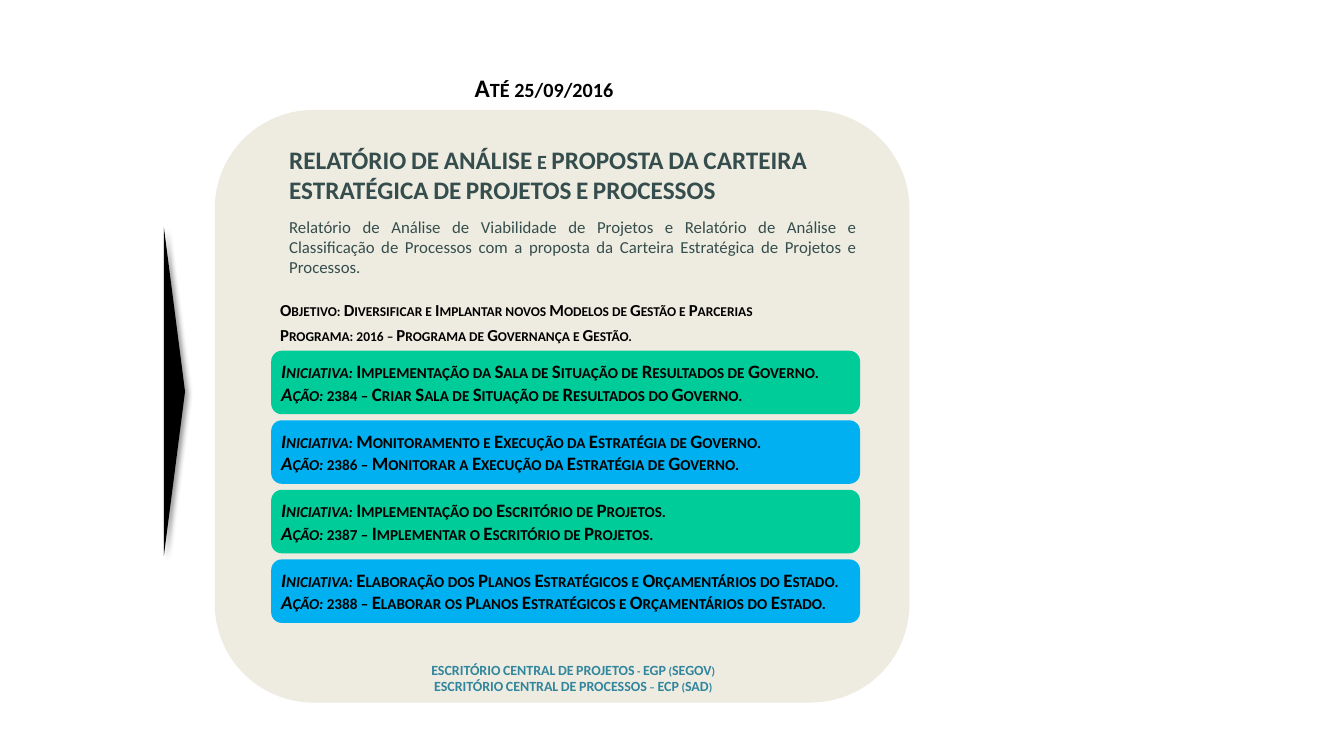
"""Build the slide on the strategic portfolio of projects and processes."""
from dataclasses import dataclass

from lxml.etree import SubElement
from pptx import Presentation
from pptx.dml.color import RGBColor
from pptx.enum.shapes import MSO_SHAPE
from pptx.enum.text import MSO_AUTO_SIZE, PP_ALIGN
from pptx.oxml.ns import qn
from pptx.util import Inches, Pt


@dataclass(frozen=True)
class Theme:
    """Colours, font and type sizes of the slide."""
    font: str = "Calibri"
    black: str = "000000"
    sand: str = "EEECE1"
    green: str = "00CC99"
    blue: str = "00B0F0"
    slate: str = "354D4C"
    teal: str = "31859C"
    head: float = 18
    item: float = 13.5
    body: float = 12
    foot: float = 10


class Board:
    """Draws styled elements on the current slide."""

    def __init__(self, slide, theme):
        """Keep the slide and its theme."""
        self.slide = slide
        self.theme = theme

    def shape(self, kind, box, fill):
        """Add a plain filled shape."""
        form = self.slide.shapes.add_shape(kind, *map(Inches, box))
        form.shadow.inherit = False
        form.fill.solid()
        form.fill.fore_color.rgb = RGBColor.from_string(fill)
        form.line.fill.background()
        return form

    def arrow(self, box):
        """Add the black pointer with its soft shadow."""
        form = self.shape(MSO_SHAPE.ISOSCELES_TRIANGLE, box, self.theme.black)
        form.rotation = 90
        effect = form._element.spPr.find(qn("a:effectLst"))
        shade = SubElement(effect, qn("a:outerShdw"), blurRad=str(Pt(4)),
                           dist=str(Pt(3)), dir=str(45 * 60000),
                           algn="tl", rotWithShape="0")
        tone = SubElement(shade, qn("a:srgbClr"), val=self.theme.black)
        SubElement(tone, qn("a:alpha"), val="40000")

    def text(self, box, lines, size, color, align=PP_ALIGN.JUSTIFY,
             bold=True, wrap=True):
        """Add lines made of (words, italic) runs; bold ones in small caps."""
        frame = self.slide.shapes.add_textbox(*map(Inches, box)).text_frame
        frame.word_wrap = wrap
        frame.auto_size = MSO_AUTO_SIZE.SHAPE_TO_FIT_TEXT
        for i, line in enumerate(lines):
            para = frame.add_paragraph() if i else frame.paragraphs[0]
            para.alignment = align
            for words, slant in line:
                run = para.add_run()
                run.text = words
                font = run.font
                font.name = self.theme.font
                font.size = Pt(size)
                font.bold = bold
                font.italic = slant
                font.color.rgb = RGBColor.from_string(color)
                if bold:
                    run._r.get_or_add_rPr().set("cap", "small")

    def card(self, top, fill, goal, task):
        """Add a coloured bar with an initiative and its action."""
        self.shape(MSO_SHAPE.ROUNDED_RECTANGLE, (2.69, top, 5.84, 0.63), fill)
        lines = [[("Iniciativa: ", True), (goal, False)],
                 [("Ação: ", True), (task, False)]]
        self.text((2.69, top + 0.04, 5.84, 0.56), lines,
                  self.theme.item, self.theme.black)


CARDS = [
    ("Implementação da Sala de Situação de Resultados de Governo.",
     "2384 – Criar Sala de Situação de Resultados do Governo."),
    ("Monitoramento e Execução da Estratégia de Governo.",
     "2386 – Monitorar a Execução da Estratégia de Governo."),
    ("Implementação do Escritório de Projetos.",
     "2387 – Implementar o Escritório de Projetos."),
    ("Elaboração dos Planos Estratégicos e Orçamentários do Estado.",
     "2388 – Elaborar os Planos Estratégicos e Orçamentários do Estado."),
]
TITLE = ("RELATÓRIO DE ANÁLISE e PROPOSTA DA CARTEIRA "
         "ESTRATÉGICA DE PROJETOS E PROCESSOS")
BRIEF = ("Relatório de Análise de Viabilidade de Projetos e Relatório de "
         "Análise e Classificação de Processos com a proposta da Carteira "
         "Estratégica de Projetos e Processos.")
AIMS = ["Objetivo: Diversificar e Implantar novos Modelos de Gestão e Parcerias",
        "Programa: 2016 – Programa de Governança e Gestão."]
UNITS = ["ESCRITÓRIO CENTRAL DE PROJETOS - EGP (SEGOV)",
         "ESCRITÓRIO CENTRAL DE PROCESSOS – ECP (SAD)"]


def main():
    """Compose and save the slide."""
    deck = Presentation()
    deck.slide_width, deck.slide_height = Inches(13.33), Inches(7.5)
    look = Theme()
    board = Board(deck.slides.add_slide(deck.slide_layouts[6]), look)

    board.shape(MSO_SHAPE.ROUNDED_RECTANGLE, (2.13, 1.09, 6.89, 5.88), look.sand)
    for i, (goal, task) in enumerate(CARDS):
        fill = look.blue if i % 2 else look.green
        board.card(3.48 + 0.69 * i, fill, goal, task)

    board.text((2.77, 1.38, 5.55, 1.39), [[(TITLE, False)]],
               look.head, look.slate, PP_ALIGN.LEFT)
    board.text((2.77, 2.1, 5.83, 0.71), [[(BRIEF, False)]],
               look.body, look.slate, bold=False)
    for i, aim in enumerate(AIMS):
        board.text((2.68, 2.92 + 0.25 * i, 5, 0.3), [[(aim, False)]],
                   look.body, look.black)
    board.text((2.24, 6.51, 6.89, 0.44), [[(unit, False)] for unit in UNITS],
               look.foot, look.teal, PP_ALIGN.CENTER)
    board.text((4.61, 0.67, 1.83, 0.4), [[("Até 25/09/2016", False)]],
               look.head, look.black, PP_ALIGN.LEFT, wrap=False)
    board.arrow((0.1, 3.78, 3.26, 0.21))
    deck.save("out.pptx")


if __name__ == "__main__":
    main()
